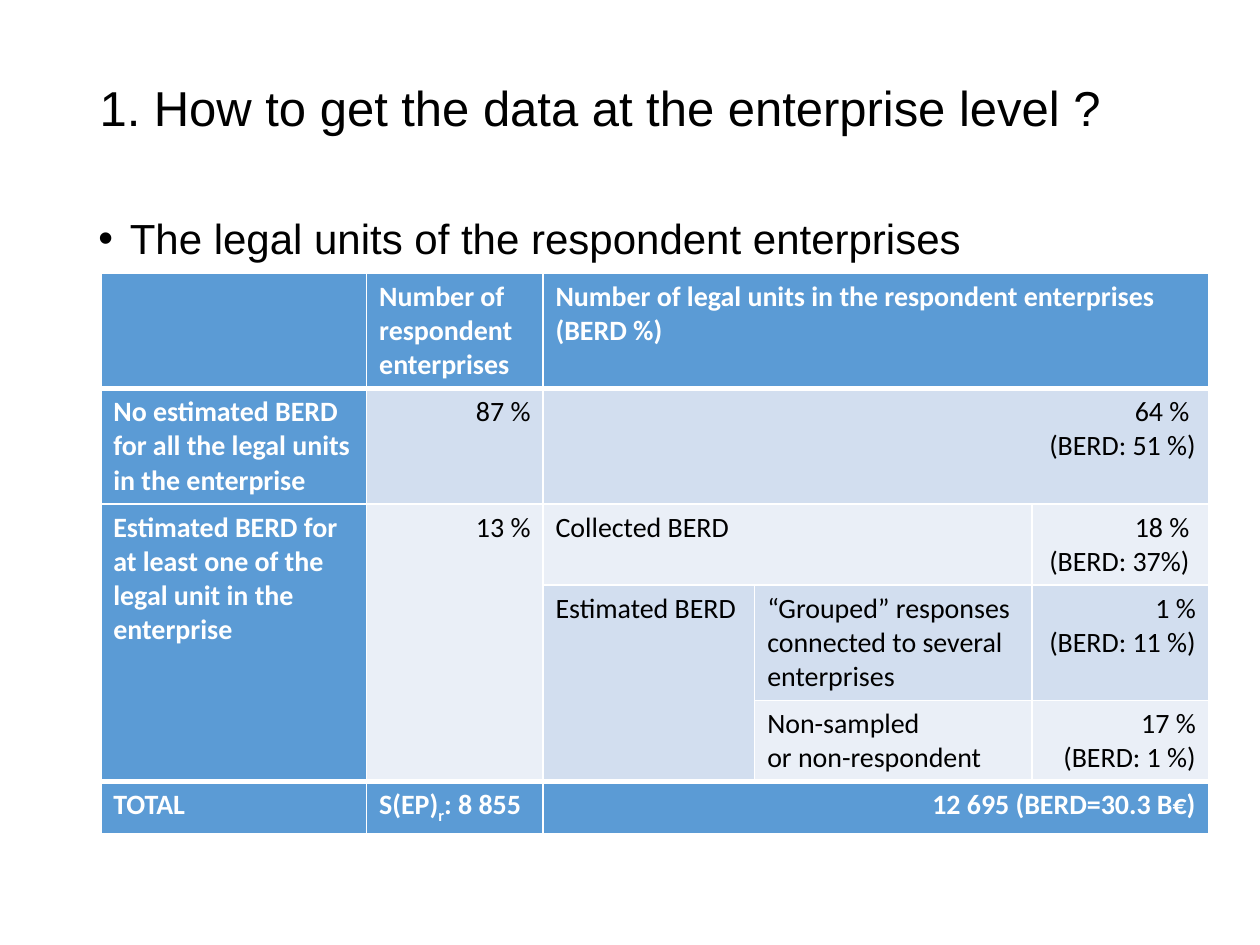
import pptx
import pptx.dml.color
import pptx.enum.text
import pptx.oxml
import pptx.oxml.ns
import pptx.util

Inches = pptx.util.Inches
Pt = pptx.util.Pt
ALIGN = pptx.enum.text.PP_ALIGN

COLORS = {
    "black": "000000",
    "white": "FFFFFF",
    "head": "5B9BD5",
    "dark": "D2DEEF",
    "light": "EAEFF7",
}
COLUMN_WIDTHS = [2.11, 1.4, 1.68, 2.2, 1.4]
ROW_HEIGHTS = [0.91, 0.91, 0.64, 0.91, 0.64, 0.41]
THICK_EDGES = (1, len(ROW_HEIGHTS) - 1)  # below the header, above the total

# row, column, row span, column span, fill, alignment, lines
CELLS = [
    (0, 0, 1, 1, "head", "LEFT", []),
    (0, 1, 1, 1, "head", "LEFT", ["Number of respondent enterprises"]),
    (0, 2, 1, 3, "head", "LEFT",
     ["Number of legal units in the respondent enterprises (BERD %)"]),
    (1, 0, 1, 1, "head", "LEFT",
     ["No estimated BERD for all the legal units in the enterprise"]),
    (1, 1, 1, 1, "dark", "RIGHT", ["87 %"]),
    (1, 2, 1, 3, "dark", "RIGHT", ["64 % ", "(BERD: 51 %)"]),
    (2, 0, 3, 1, "head", "LEFT",
     ["Estimated BERD for at least one of the legal unit in the enterprise"]),
    (2, 1, 3, 1, "light", "RIGHT", ["13 %"]),
    (2, 2, 1, 2, "light", "LEFT", ["Collected BERD"]),
    (2, 4, 1, 1, "light", "RIGHT", ["18 % ", "(BERD: 37%) "]),
    (3, 2, 2, 1, "dark", "LEFT", ["Estimated BERD"]),
    (3, 3, 1, 1, "dark", "LEFT",
     ["“Grouped” responses connected to several enterprises"]),
    (3, 4, 1, 1, "dark", "RIGHT", ["1 %", "(BERD: 11 %)"]),
    (4, 3, 1, 1, "light", "LEFT", ["Non-sampled", "or non-respondent"]),
    (4, 4, 1, 1, "light", "RIGHT", ["17 %", "(BERD: 1 %)"]),
    (5, 0, 1, 1, "head", "LEFT", ["TOTAL"]),
    (5, 1, 1, 1, "head", "LEFT", [("S(EP)", "r", ": 8 855")]),
    (5, 2, 1, 3, "head", "RIGHT", ["12 695 (BERD=30.3 B€)"]),
]


def rgb(name):
    return pptx.dml.color.RGBColor.from_string(COLORS[name])


def add_span(para, text, font="Calibri", size=16, color="black", bold=False, baseline=0):
    span = para.add_run()
    span.text = text
    span.font.name = font
    span.font.size = Pt(size)
    span.font.bold = bold
    span.font.color.rgb = rgb(color)
    if baseline:
        span._r.get_or_add_rPr().set("baseline", str(baseline * 1000))


def add_border(cell, side, width):
    cell._tc.get_or_add_tcPr().append(pptx.oxml.parse_xml(
        f'<a:ln{side} {pptx.oxml.ns.nsdecls("a")} w="{Pt(width)}">'
        f'<a:solidFill><a:srgbClr val="{COLORS["white"]}"/></a:solidFill></a:ln{side}>'))


class SlideBuilder:
    """Holds the heading style and the current slide."""

    heading_font = "Arial"

    def __init__(self, deck):
        self.page = deck.slides.add_slide(deck.slide_layouts[1])

    def heading(self, index, text, position, size, anchor):
        """Fill a template placeholder with one line and return its paragraph."""
        box = self.page.placeholders[index]
        box.left, box.top, box.width, box.height = map(Inches, position)
        frame = box.text_frame
        frame.word_wrap = True
        frame.auto_size = pptx.enum.text.MSO_AUTO_SIZE.NONE
        frame.vertical_anchor = anchor
        para = frame.paragraphs[0]
        para.alignment = ALIGN.LEFT
        para.line_spacing = 0.9
        para.space_before = Pt(0)
        add_span(para, text, font=self.heading_font, size=size)
        return para

    def title(self, text):
        self.heading(0, text, (0.69, 0.4, 8.62, 0.95), 28,
                     pptx.enum.text.MSO_ANCHOR.MIDDLE)

    def bullet(self, text):
        para = self.heading(1, text, (0.68, 1.68, 8.73, 0.54), 24,
                            pptx.enum.text.MSO_ANCHOR.TOP)
        properties = para._p.get_or_add_pPr()
        properties.set("marL", str(Inches(0.25)))
        properties.set("indent", str(-Inches(0.25)))
        properties.append(pptx.oxml.parse_xml(
            f'<a:buChar {pptx.oxml.ns.nsdecls("a")} char="•"/>'))

    def table(self, left, top):
        table = self.page.shapes.add_table(
            len(ROW_HEIGHTS), len(COLUMN_WIDTHS), Inches(left), Inches(top),
            Inches(sum(COLUMN_WIDTHS)), Inches(sum(ROW_HEIGHTS))).table
        for column, width in zip(table.columns, COLUMN_WIDTHS):
            column.width = Inches(width)
        for row, height in zip(table.rows, ROW_HEIGHTS):
            row.height = Inches(height)
        for entry in CELLS:
            self.cell(table, *entry)

    def cell(self, table, row, column, row_span, column_span, fill, align, lines):
        """Merge, fill and border one area of the table, then write its lines."""
        origin = table.cell(row, column)
        if row_span * column_span > 1:
            origin.merge(table.cell(row + row_span - 1, column + column_span - 1))
        edges = {"L": None, "R": None, "T": row, "B": row + row_span}
        for i in range(row, row + row_span):
            for j in range(column, column + column_span):
                part = table.cell(i, j)
                for side, edge in edges.items():
                    add_border(part, side, 3 if edge in THICK_EDGES else 1)
                part.fill.solid()
                part.fill.fore_color.rgb = rgb(fill)
        is_head = fill == "head"
        style = {"color": "white" if is_head else "black", "bold": is_head}
        frame = origin.text_frame
        for number, line in enumerate(lines):
            para = frame.add_paragraph() if number else frame.paragraphs[0]
            para.alignment = ALIGN[align]
            pieces = (line,) if isinstance(line, str) else line
            for place, piece in enumerate(pieces):
                # every second piece of a split line is a subscript
                add_span(para, piece, baseline=-25 * (place % 2), **style)


def main():
    deck = pptx.Presentation()
    deck.slide_width, deck.slide_height = Inches(10), Inches(7.5)
    builder = SlideBuilder(deck)
    builder.title("1. How to get the data at the enterprise level ?")
    builder.bullet("The legal units of the respondent enterprises")
    builder.table(0.8, 2.17)
    deck.save("out.pptx")


if __name__ == "__main__":
    main()
